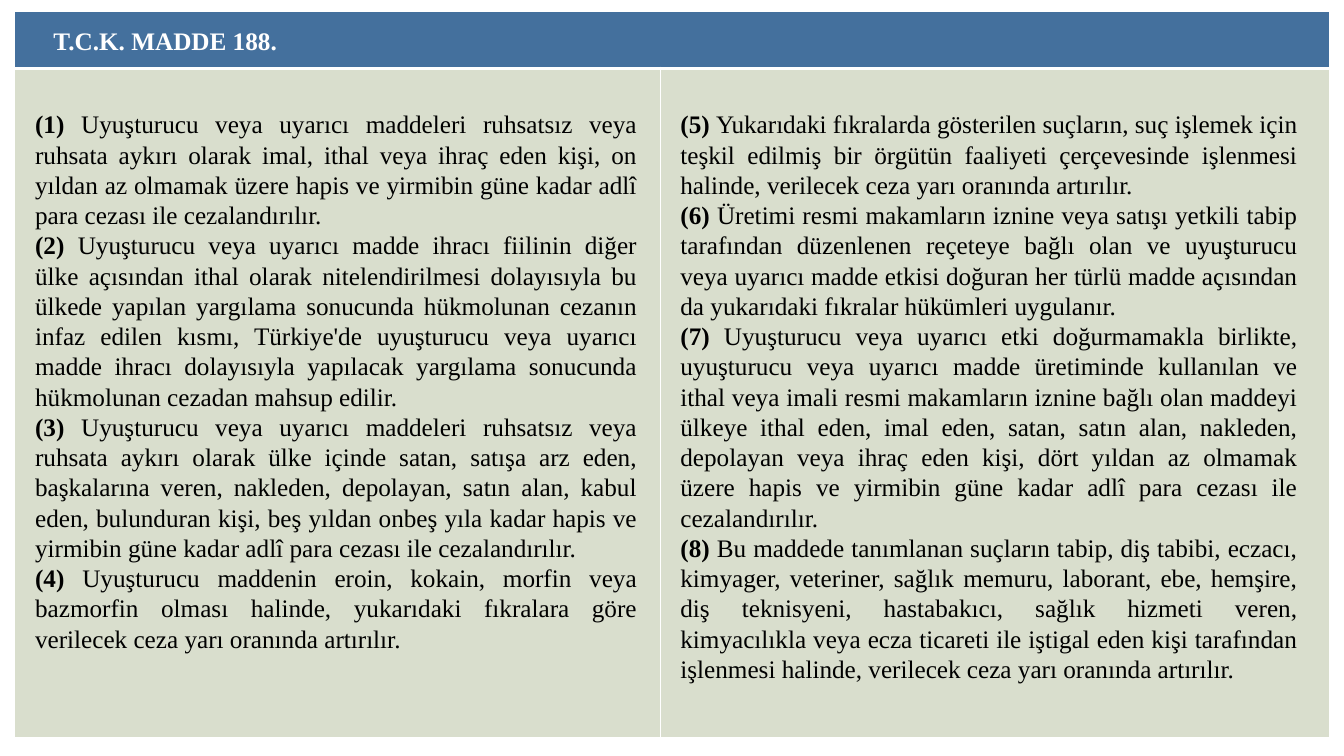
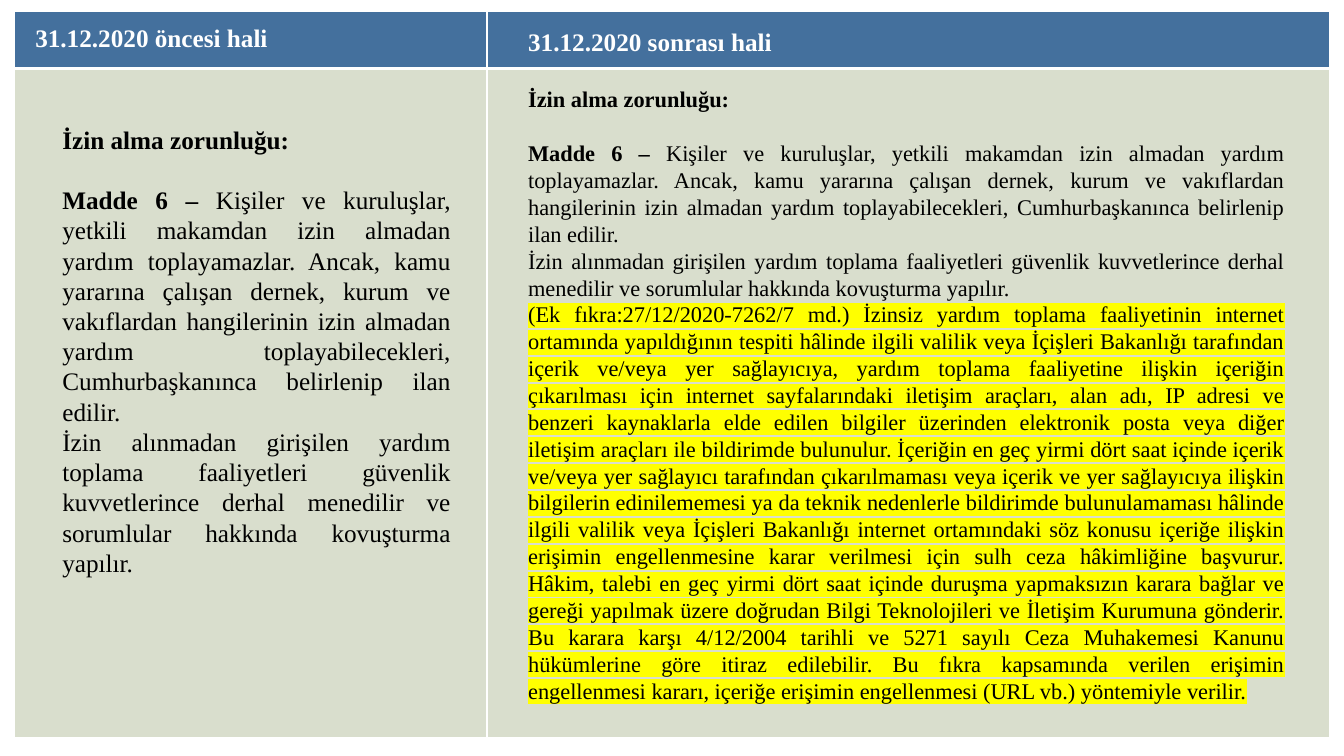
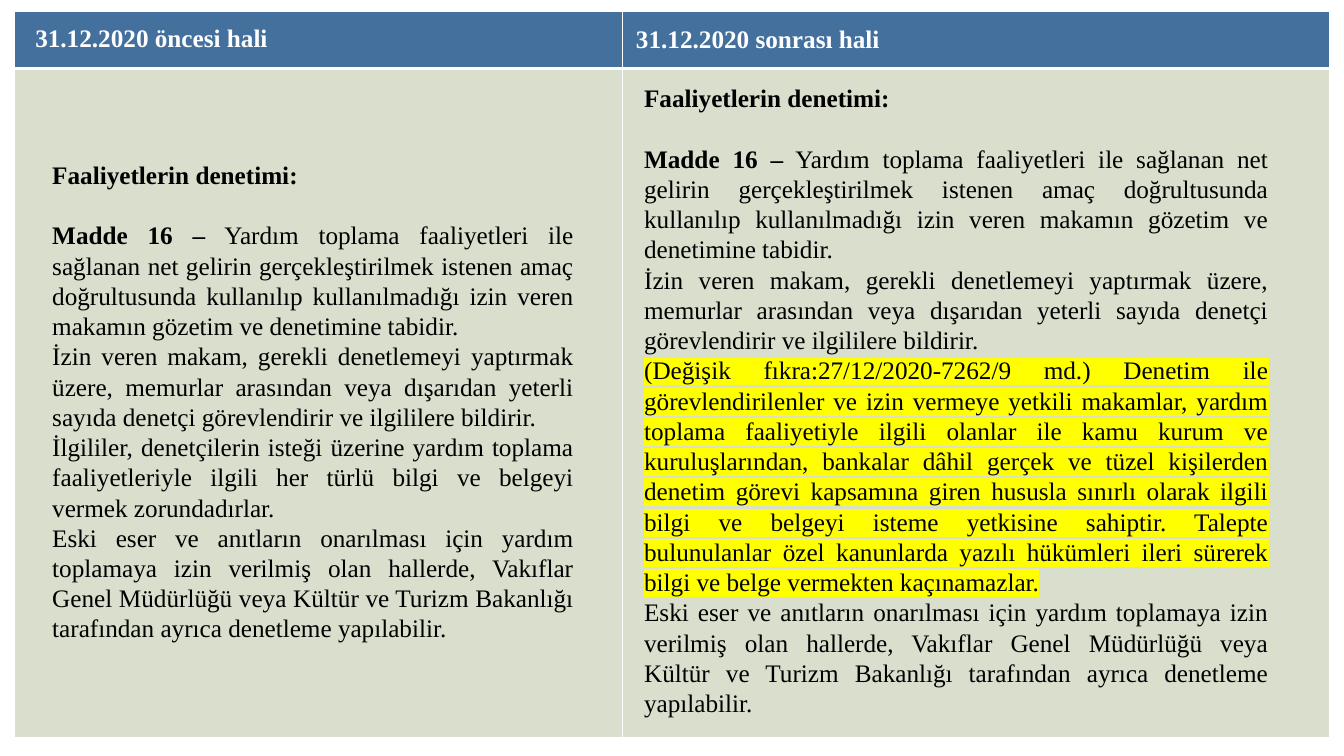
from dataclasses import dataclass

from lxml.etree import SubElement
from pptx import Presentation
from pptx.dml.color import RGBColor
from pptx.enum.text import MSO_ANCHOR, MSO_AUTO_SIZE, PP_ALIGN
from pptx.oxml.ns import qn
from pptx.util import Inches, Pt

WHITE = RGBColor(0xFF, 0xFF, 0xFF)
BLACK = RGBColor(0x00, 0x00, 0x00)
BLUE = RGBColor(0x44, 0x70, 0x9D)
SAGE = RGBColor(0xD9, 0xDE, 0xCD)
YELLOW = RGBColor(0xFF, 0xFF, 0x00)

FONT = "Times New Roman"
TITLE_SIZE = 18
LINE_FACTOR = 1.2
TABLE_LEFT, TABLE_TOP = 0.14, 0.11
ROW_HEIGHTS = (0.57, 6.64)
HEADER_BORDERS = {"L": 1, "R": 1, "T": 1, "B": 3}
BODY_BORDERS = {"L": 1, "R": 1, "T": 3, "B": 1}
BEFORE = "31.12.2020 öncesi hali"
AFTER = "31.12.2020 sonrası hali"


@dataclass
class Passage:
    """A paragraph with a bold lead; without body text it is a heading."""
    lead: str = ""
    text: str = ""
    marked: bool = False


TRAFFICKING_LEFT = [
    Passage("(1) ", "Uyuşturucu veya uyarıcı maddeleri ruhsatsız veya ruhsata aykırı olarak imal, "
            "ithal veya ihraç eden kişi, on yıldan az olmamak üzere hapis ve yirmibin güne kadar "
            "adlî para cezası ile cezalandırılır."),
    Passage("(2) ", "Uyuşturucu veya uyarıcı madde ihracı fiilinin diğer ülke açısından ithal "
            "olarak nitelendirilmesi dolayısıyla bu ülkede yapılan yargılama sonucunda hükmolunan "
            "cezanın infaz edilen kısmı, Türkiye'de uyuşturucu veya uyarıcı madde ihracı "
            "dolayısıyla yapılacak yargılama sonucunda hükmolunan cezadan mahsup edilir."),
    Passage("(3) ", "Uyuşturucu veya uyarıcı maddeleri ruhsatsız veya ruhsata aykırı olarak ülke "
            "içinde satan, satışa arz eden, başkalarına veren, nakleden, depolayan, satın alan, "
            "kabul eden, bulunduran kişi, beş yıldan onbeş yıla kadar hapis ve yirmibin güne "
            "kadar adlî para cezası ile cezalandırılır."),
    Passage("(4) ", "Uyuşturucu maddenin eroin, kokain, morfin veya bazmorfin olması halinde, "
            "yukarıdaki fıkralara göre verilecek ceza yarı oranında artırılır."),
]
TRAFFICKING_RIGHT = [
    Passage("(5) ", "Yukarıdaki fıkralarda gösterilen suçların, suç işlemek için teşkil edilmiş "
            "bir örgütün faaliyeti çerçevesinde işlenmesi halinde, verilecek ceza yarı oranında "
            "artırılır."),
    Passage("(6) ", "Üretimi resmi makamların iznine veya satışı yetkili tabip tarafından "
            "düzenlenen reçeteye bağlı olan ve uyuşturucu veya uyarıcı madde etkisi doğuran her "
            "türlü madde açısından da yukarıdaki fıkralar hükümleri uygulanır."),
    Passage("(7) ", "Uyuşturucu veya uyarıcı etki doğurmamakla birlikte, uyuşturucu veya uyarıcı "
            "madde üretiminde kullanılan ve ithal veya imali resmi makamların iznine bağlı olan "
            "maddeyi ülkeye ithal eden, imal eden, satan, satın alan, nakleden, depolayan veya "
            "ihraç eden kişi, dört yıldan az olmamak üzere hapis ve yirmibin güne kadar adlî para "
            "cezası ile cezalandırılır."),
    Passage("(8) ", "Bu maddede tanımlanan suçların tabip, diş tabibi, eczacı, kimyager, "
            "veteriner, sağlık memuru, laborant, ebe, hemşire, diş teknisyeni, hastabakıcı, "
            "sağlık hizmeti veren, kimyacılıkla veya ecza ticareti ile iştigal eden kişi "
            "tarafından işlenmesi halinde, verilecek ceza yarı oranında artırılır."),
]

PERMIT_BEFORE = [
    Passage("İzin alma zorunluğu:"),
    Passage("Madde 6 –", " Kişiler ve kuruluşlar, yetkili makamdan izin almadan yardım "
            "toplayamazlar. Ancak, kamu yararına çalışan dernek, kurum ve vakıflardan "
            "hangilerinin izin almadan yardım toplayabilecekleri, Cumhurbaşkanınca belirlenip "
            "ilan edilir."),
    Passage(text="İzin alınmadan girişilen yardım toplama faaliyetleri güvenlik kuvvetlerince "
            "derhal menedilir ve sorumlular hakkında kovuşturma yapılır."),
]
PERMIT_ADDED_SENTENCES = [
    "(Ek fıkra:27/12/2020-7262/7 md.) İzinsiz yardım toplama faaliyetinin internet ortamında "
    "yapıldığının tespiti hâlinde ilgili valilik veya İçişleri Bakanlığı tarafından içerik "
    "ve/veya yer sağlayıcıya, yardım toplama faaliyetine ilişkin içeriğin çıkarılması için "
    "internet sayfalarındaki iletişim araçları, alan adı, IP adresi ve benzeri kaynaklarla elde "
    "edilen bilgiler üzerinden elektronik posta veya diğer iletişim araçları ile bildirimde "
    "bulunulur.",
    "İçeriğin en geç yirmi dört saat içinde içerik ve/veya yer sağlayıcı tarafından "
    "çıkarılmaması veya içerik ve yer sağlayıcıya ilişkin bilgilerin edinilememesi ya da teknik "
    "nedenlerle bildirimde bulunulamaması hâlinde ilgili valilik veya İçişleri Bakanlığı "
    "internet ortamındaki söz konusu içeriğe ilişkin erişimin engellenmesine karar verilmesi "
    "için sulh ceza hâkimliğine başvurur.",
    "Hâkim, talebi en geç yirmi dört saat içinde duruşma yapmaksızın karara bağlar ve gereği "
    "yapılmak üzere doğrudan Bilgi Teknolojileri ve İletişim Kurumuna gönderir.",
    "Bu karara karşı 4/12/2004 tarihli ve 5271 sayılı Ceza Muhakemesi Kanunu hükümlerine göre "
    "itiraz edilebilir.",
    "Bu fıkra kapsamında verilen erişimin engellenmesi kararı, içeriğe erişimin engellenmesi "
    "(URL vb.) yöntemiyle verilir.",
]
PERMIT_AFTER = PERMIT_BEFORE + [Passage(text=" ".join(PERMIT_ADDED_SENTENCES), marked=True)]

AUDIT_OPENING = [
    Passage("Faaliyetlerin denetimi:"),
    Passage("Madde 16 –", " Yardım toplama faaliyetleri ile sağlanan net gelirin "
            "gerçekleştirilmek istenen amaç doğrultusunda kullanılıp kullanılmadığı izin veren "
            "makamın gözetim ve denetimine tabidir."),
    Passage(text="İzin veren makam, gerekli denetlemeyi yaptırmak üzere, memurlar arasından veya "
            "dışarıdan yeterli sayıda denetçi görevlendirir ve ilgililere bildirir."),
]
AUDIT_CLOSING = Passage(
    text="Eski eser ve anıtların onarılması için yardım toplamaya izin verilmiş olan hallerde, "
    "Vakıflar Genel Müdürlüğü veya Kültür ve Turizm Bakanlığı tarafından ayrıca denetleme "
    "yapılabilir.")
AUDIT_BEFORE = AUDIT_OPENING + [
    Passage(text="İlgililer, denetçilerin isteği üzerine yardım toplama faaliyetleriyle ilgili "
            "her türlü bilgi ve belgeyi vermek zorundadırlar."),
    AUDIT_CLOSING,
]
AUDIT_AFTER = AUDIT_OPENING + [
    Passage(text="(Değişik fıkra:27/12/2020-7262/9 md.) Denetim ile görevlendirilenler ve izin "
            "vermeye yetkili makamlar, yardım toplama faaliyetiyle ilgili olanlar ile kamu kurum "
            "ve kuruluşlarından, bankalar dâhil gerçek ve tüzel kişilerden denetim görevi "
            "kapsamına giren hususla sınırlı olarak ilgili bilgi ve belgeyi isteme yetkisine "
            "sahiptir. Talepte bulunulanlar özel kanunlarda yazılı hükümleri ileri sürerek bilgi "
            "ve belge vermekten kaçınamazlar.", marked=True),
    AUDIT_CLOSING,
]


def set_attributes(target, values):
    for name, value in values.items():
        setattr(target, name, value)


def add_run(paragraph, text, size, color, bold=False):
    run = paragraph.add_run()
    run.text = text
    set_attributes(run.font, {"name": FONT, "size": Pt(size), "bold": bold})
    run.font.color.rgb = color
    return run


def highlight(run):
    properties = run._r.get_or_add_rPr()
    mark = SubElement(properties, qn("a:highlight"))
    SubElement(mark, qn("a:srgbClr"), val=str(YELLOW))
    properties.find(qn("a:solidFill")).addnext(mark)


def set_borders(cell, widths):
    properties = cell._tc.get_or_add_tcPr()
    for side, width in widths.items():
        line = SubElement(properties, qn(f"a:ln{side}"), w=str(int(Pt(width))))
        fill = SubElement(line, qn("a:solidFill"))
        SubElement(fill, qn("a:srgbClr"), val=str(WHITE))


def add_comparison_table(slide, column_widths, merge_header):
    """Add the empty two-column panel that carries the texts."""
    frame = slide.shapes.add_table(
        2, 2, Inches(TABLE_LEFT), Inches(TABLE_TOP),
        Inches(sum(column_widths)), Inches(sum(ROW_HEIGHTS)))
    table = frame.table
    set_attributes(table, {"first_row": False, "horz_banding": False})
    for column, width in zip(table.columns, column_widths):
        column.width = Inches(width)
    styles = ((BLUE, HEADER_BORDERS), (SAGE, BODY_BORDERS))
    for row, height, (color, borders) in zip(table.rows, ROW_HEIGHTS, styles):
        row.height = Inches(height)
        for cell in row.cells:
            set_borders(cell, borders)
            cell.fill.solid()
            cell.fill.fore_color.rgb = color
    if merge_header:
        table.cell(0, 0).merge(table.cell(0, 1))


def format_header(shape, text):
    set_attributes(shape.text_frame, {
        "word_wrap": False, "vertical_anchor": MSO_ANCHOR.TOP,
        "auto_size": MSO_AUTO_SIZE.SHAPE_TO_FIT_TEXT})
    paragraph = shape.text_frame.paragraphs[0]
    paragraph.alignment = PP_ALIGN.LEFT
    add_run(paragraph, text, TITLE_SIZE, WHITE, bold=True)


def add_title(slide, text, left, top, width):
    title = slide.shapes.title
    set_attributes(title, {"left": Inches(left), "top": Inches(top),
                           "width": Inches(width), "height": Inches(0.4)})
    format_header(title, text)
    # The title has to lie in front of the table.
    slide.shapes._spTree.append(title._element)


def add_header(slide, text, left, top, width):
    box = slide.shapes.add_textbox(Inches(left), Inches(top), Inches(width), Inches(0.4))
    format_header(box, text)


def add_passages(slide, passages, left, top, width, height, size=18):
    box = slide.shapes.add_textbox(*map(Inches, (left, top, width, height)))
    frame = box.text_frame
    set_attributes(frame, {"word_wrap": True, "auto_size": MSO_AUTO_SIZE.SHAPE_TO_FIT_TEXT})
    for index, passage in enumerate(passages):
        paragraph = frame.add_paragraph() if index else frame.paragraphs[0]
        paragraph.alignment = PP_ALIGN.JUSTIFY
        if passage.lead:
            add_run(paragraph, passage.lead, size, BLACK, bold=True)
        if passage.text:
            run = add_run(paragraph, passage.text, size, BLACK)
            if passage.marked:
                highlight(run)
        else:
            paragraph.space_after = Pt(size * LINE_FACTOR)


def add_slide(presentation, column_widths, merge_header=False):
    slide = presentation.slides.add_slide(presentation.slide_layouts.get_by_name("Title Only"))
    add_comparison_table(slide, column_widths, merge_header)
    return slide


def main():
    presentation = Presentation()
    set_attributes(presentation, {"slide_width": Inches(13.33), "slide_height": Inches(7.5)})

    slide = add_slide(presentation, (6.41, 6.64), merge_header=True)
    add_title(slide, "T.C.K. MADDE 188.", 0.43, 0.2, 2.44)
    add_passages(slide, TRAFFICKING_LEFT, 0.25, 1.03, 6.17, 5.55)
    add_passages(slide, TRAFFICKING_RIGHT, 6.65, 1.03, 6.32, 5.86)

    slide = add_slide(presentation, (4.69, 8.36))
    add_title(slide, BEFORE, 0.25, 0.17, 2.53)
    add_header(slide, AFTER, 5.14, 0.21, 2.64)
    add_passages(slide, PERMIT_BEFORE, 0.52, 1.18, 4.05, 4.64)
    add_passages(slide, PERMIT_AFTER, 5.14, 0.8, 7.7, 6.29, size=16)

    slide = add_slide(presentation, (6.03, 7.02))
    add_title(slide, BEFORE, 0.25, 0.17, 2.53)
    add_header(slide, AFTER, 6.21, 0.18, 2.64)
    add_passages(slide, AUDIT_BEFORE, 0.42, 1.53, 5.37, 4.95)
    add_passages(slide, AUDIT_AFTER, 6.29, 0.77, 6.39, 6.46)

    presentation.save("out.pptx")


if __name__ == "__main__":
    main()
